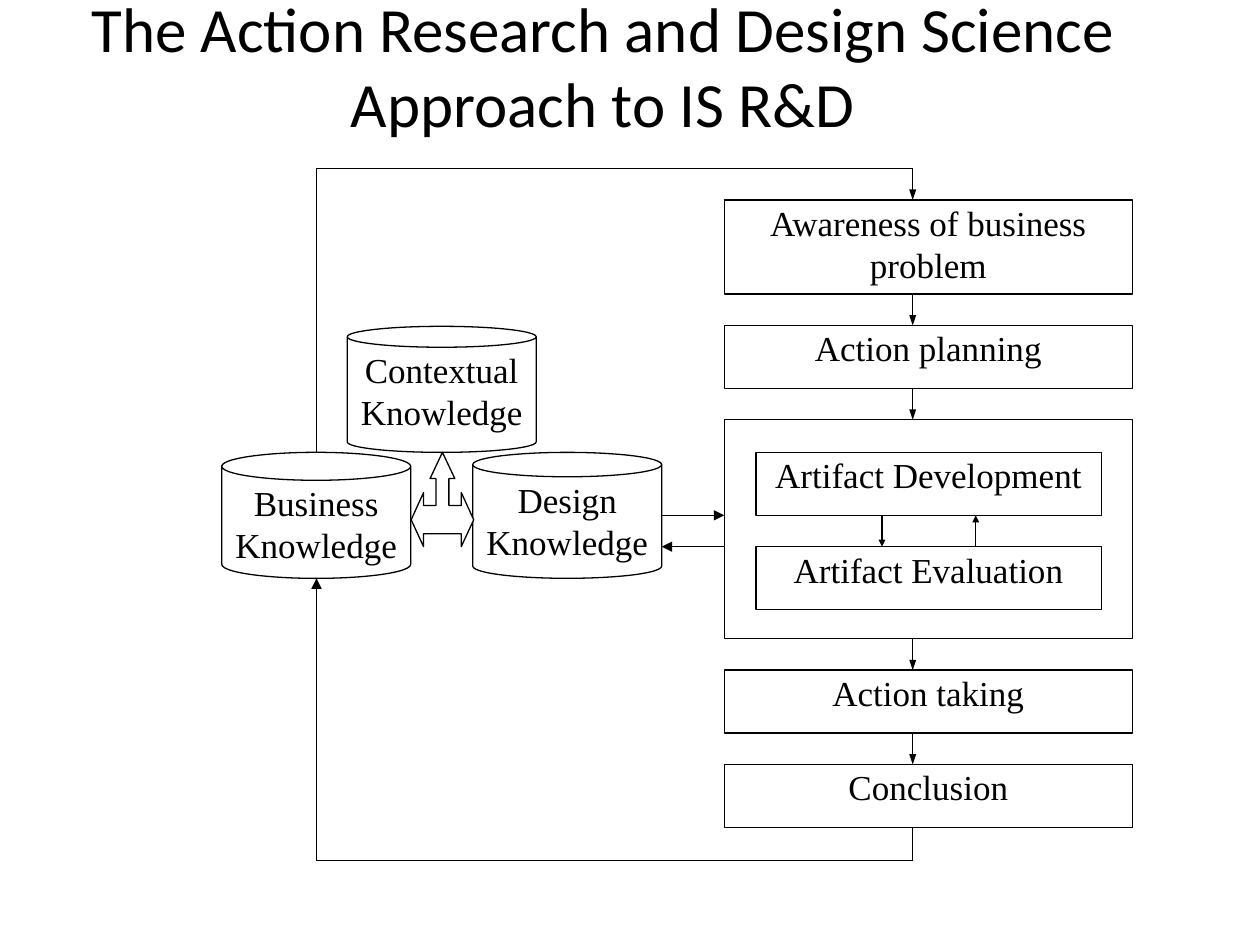
from lxml import etree
from pptx import Presentation
from pptx.dml.color import RGBColor
from pptx.enum.shapes import MSO_CONNECTOR, MSO_SHAPE
from pptx.enum.text import MSO_ANCHOR, MSO_AUTO_SIZE, PP_ALIGN
from pptx.oxml.ns import qn
from pptx.util import Cm, Pt

RECT, CAN = MSO_SHAPE.RECTANGLE, MSO_SHAPE.CAN
STRAIGHT = MSO_CONNECTOR.STRAIGHT
CENTER, TOP, MIDDLE = PP_ALIGN.CENTER, MSO_ANCHOR.TOP, MSO_ANCHOR.MIDDLE
NO_AUTOFIT = MSO_AUTO_SIZE.NONE
BLACK, WHITE = "000000", "FFFFFF"
TITLE_FONT = {"name": "Calibri", "size": Pt(36)}
LABEL_FONT = {"name": "Times New Roman", "size": Pt(20)}

# Layout in centimetres
STEP_X, STEP_W, STEP_H, GAP = 14.6, 8.23, 1.27, 0.63
FLOW_X, LOOP_X = 18.4, 6.38
LOOP_TOP, LOOP_BOTTOM = 3.4, 17.35
CAN_W, CAN_H, CAN_Y = 3.81, 2.54, 9.12
ARTIFACT_X, ARTIFACT_W = 15.24, 6.96
STEPS = [("Awareness of business problem", 1.9), ("Action planning", STEP_H),
         ("", 4.42), ("Action taking", STEP_H), ("Conclusion", STEP_H)]


def color(value):
    return RGBColor.from_string(value)


def write(tf, lines, font, anchor, side=0.0, edge=0.0):
    frame_format = {
        "word_wrap": True, "auto_size": NO_AUTOFIT, "vertical_anchor": anchor,
        "margin_left": Cm(side), "margin_right": Cm(side),
        "margin_top": Cm(edge), "margin_bottom": Cm(edge)}
    for key, value in frame_format.items():
        setattr(tf, key, value)
    for i, line in enumerate(lines):
        p = tf.add_paragraph() if i else tf.paragraphs[0]
        p.alignment = CENTER
        r = p.add_run()
        r.text = line
        for key, value in font.items():
            setattr(r.font, key, value)
        r.font.color.rgb = color(BLACK)


def outline(sp):
    sp.shadow.inherit = False
    sp.fill.solid()
    sp.fill.fore_color.rgb = color(WHITE)
    sp.line.color.rgb = color(BLACK)
    sp.line.width = Pt(0.75)


def add_box(s, x, y, w, h, label):
    sp = s.shapes.add_shape(RECT, Cm(x), Cm(y), Cm(w), Cm(h))
    outline(sp)
    if label:
        write(sp.text_frame, [label], LABEL_FONT, TOP, 0.15, 0.03)


def add_store(s, x, y, lid, lines):
    sp = s.shapes.add_shape(CAN, Cm(x), Cm(y), Cm(CAN_W), Cm(CAN_H))
    sp.adjustments[0] = lid
    outline(sp)
    write(sp.text_frame, lines, LABEL_FONT, TOP, 0.05, 0.03)


def add_line(s, start, end, head=None):
    """Draw a line; head is (width, length) of an arrowhead at the end."""
    c = s.shapes.add_connector(STRAIGHT, *map(Cm, start + end))
    c.line.color.rgb = color(BLACK)
    c.line.width = Pt(0.75)
    spPr = c._element.spPr
    if head:
        etree.SubElement(c.line._get_or_add_ln(), qn("a:tailEnd"),
                         type="triangle", w=head[0], len=head[1])
    etree.SubElement(spPr, qn("a:effectLst"))


def add_three_way_arrow(s, x, y):
    right = [(0.25, 0.53), (0.13, 0.53), (0.13, 1.07), (0.38, 1.07), (0.38, 0.81),
             (0.63, 1.36), (0.38, 1.9), (0.38, 1.64)]
    left = [(-dx, dy) for dx, dy in reversed(right)]
    builder = s.shapes.build_freeform(Cm(x), Cm(y))
    builder.add_line_segments([(Cm(x + dx), Cm(y + dy)) for dx, dy in right + left])
    outline(builder.convert_to_shape())


def add_title(s, text):
    sp = s.shapes.title
    place = {"left": 0.79, "top": 0.2, "width": 22.73, "height": 2.21}
    for key, value in place.items():
        setattr(sp, key, Cm(value))
    write(sp.text_frame, [text], TITLE_FONT, MIDDLE, 0.25, 0.13)


def main():
    prs = Presentation()
    prs.slide_width, prs.slide_height = Cm(25.4), Cm(19.05)
    s = prs.slides.add_slide(prs.slide_layouts[5])
    add_title(s, "The Action Research and Design Science Approach to IS R&D")

    # Process steps, with an arrow down into each one
    y = LOOP_TOP + GAP
    for i, (label, h) in enumerate(STEPS):
        add_box(s, STEP_X, y, STEP_W, h, label)
        add_line(s, (FLOW_X, y - GAP), (FLOW_X, y), ("sm", "med"))
        y += h + GAP

    # Artifact cycle inside the large step
    upper, lower = CAN_Y + STEP_H, CAN_Y + STEP_H + GAP
    add_box(s, ARTIFACT_X, CAN_Y, ARTIFACT_W, STEP_H, "Artifact Development")
    add_box(s, ARTIFACT_X, lower, ARTIFACT_W, STEP_H, "Artifact Evaluation")
    add_line(s, (17.78, upper), (17.78, lower), ("sm", "sm"))
    add_line(s, (19.67, lower), (19.67, upper), ("sm", "sm"))

    # Knowledge stores and their links
    add_store(s, 9.53, CAN_Y, 0.194, ["Design", "Knowledge"])
    add_store(s, 4.47, CAN_Y, 0.222, ["Business", "Knowledge"])
    add_store(s, 7.0, CAN_Y - CAN_H, 0.166, ["Contextual", "Knowledge"])
    add_three_way_arrow(s, 8.92, CAN_Y)
    design_right = 9.53 + CAN_W
    add_line(s, (design_right, upper), (STEP_X, upper), ("med", "med"))
    add_line(s, (STEP_X, lower), (design_right, lower), ("med", "med"))

    # Feedback loop from the conclusion back to the first step
    add_line(s, (FLOW_X, y - GAP), (FLOW_X, LOOP_BOTTOM))
    add_line(s, (FLOW_X, LOOP_BOTTOM), (LOOP_X, LOOP_BOTTOM))
    add_line(s, (LOOP_X, LOOP_BOTTOM), (LOOP_X, CAN_Y + CAN_H), ("med", "med"))
    add_line(s, (LOOP_X, CAN_Y), (LOOP_X, LOOP_TOP))
    add_line(s, (LOOP_X, LOOP_TOP), (FLOW_X, LOOP_TOP))

    prs.save("out.pptx")


if __name__ == "__main__":
    main()
